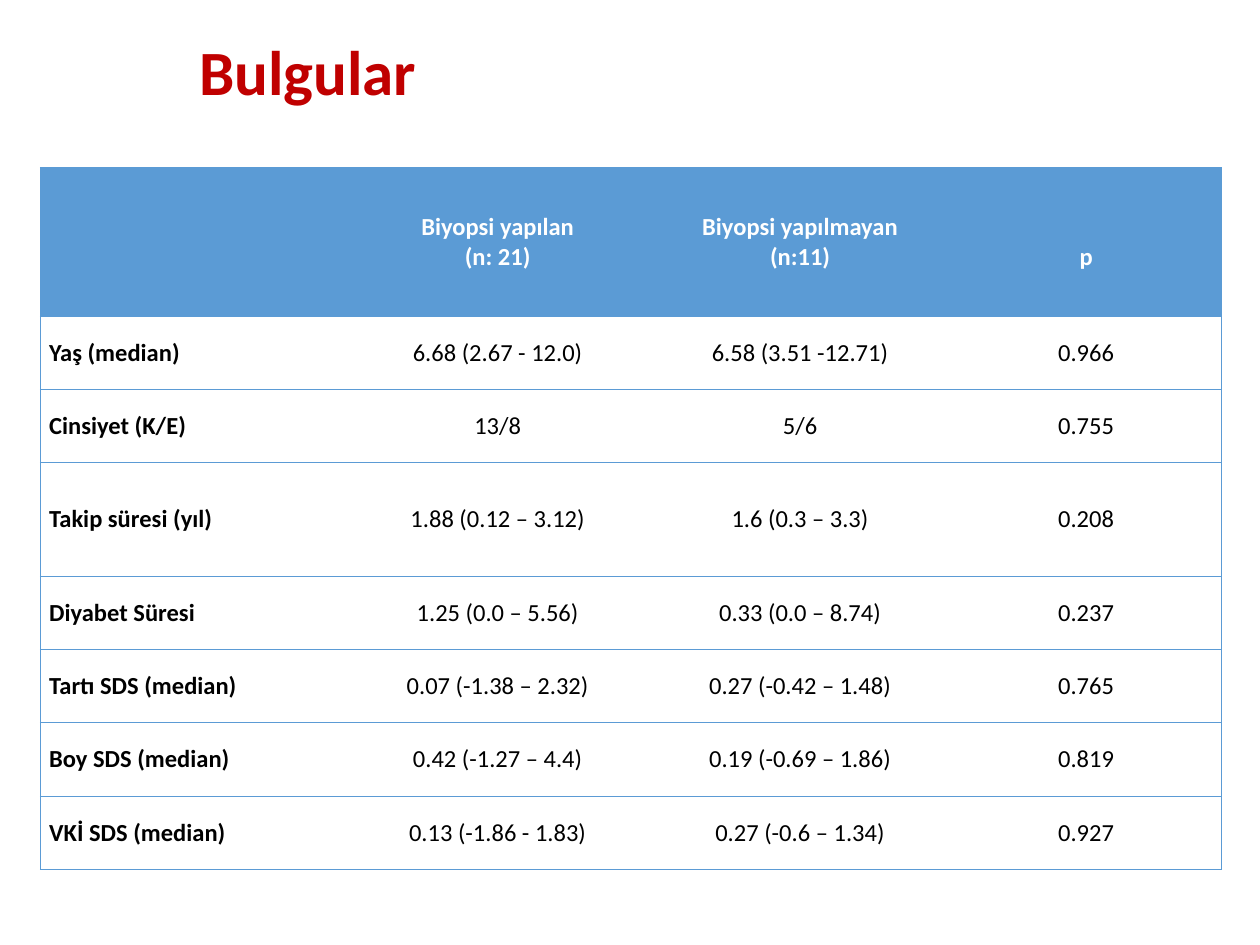
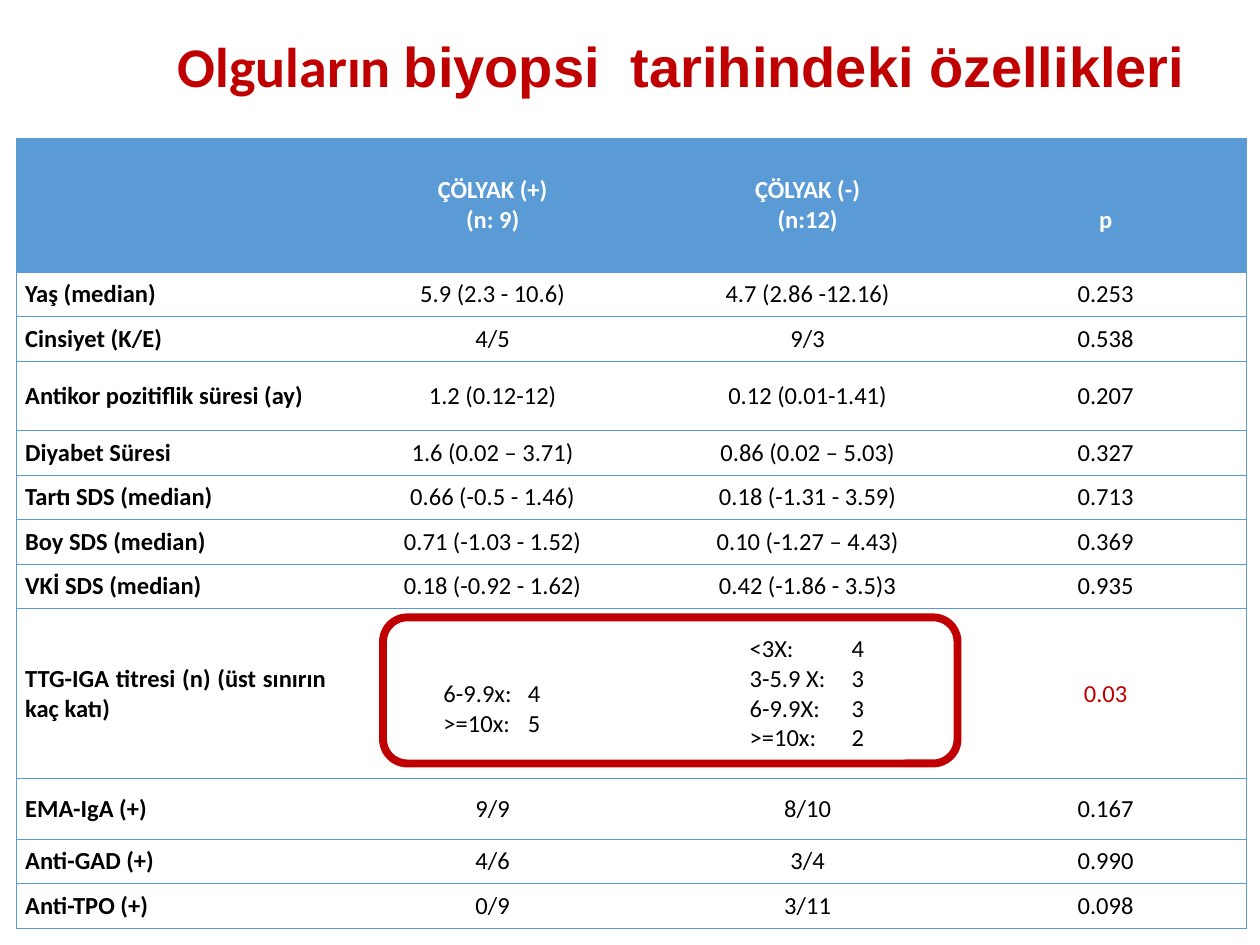
from lxml.etree import SubElement
from pptx import Presentation
from pptx.dml.color import RGBColor
from pptx.enum.shapes import MSO_SHAPE
from pptx.enum.text import MSO_ANCHOR, PP_ALIGN
from pptx.oxml import parse_xml
from pptx.oxml.ns import nsdecls, qn
from pptx.util import Inches, Pt

RED = RGBColor(0xC0, 0x00, 0x00)
BLUE = RGBColor(0x5B, 0x9B, 0xD5)
WHITE = RGBColor(0xFF, 0xFF, 0xFF)
BLACK = RGBColor(0x00, 0x00, 0x00)
FONT = "Calibri"
LINE_HEIGHT = 0.24

SLIDES = [
    {
        "title": [("Bulgular", FONT)],
        "title_at": (1.48, 0.26),
        "title_size": 36,
        "table_at": (0.32, 1.33),
        "height": 5.57,
        "cols": (2.43, 2.4, 2.4, 2.14),
        "special_rows": {0: 1.18, 3: 0.9},
        "rows": [
            ("", "Biyopsi yapılan\n(n: 21)", "Biyopsi yapılmayan\n(n:11)", "p"),
            ("Yaş (median)", "6.68 (2.67 - 12.0)", "6.58 (3.51 -12.71)", "0.966"),
            ("Cinsiyet (K/E)", "13/8", "5/6", "0.755"),
            ("Takip süresi (yıl)", "1.88 (0.12 – 3.12)", "1.6 (0.3 – 3.3)", "0.208"),
            ("Diyabet Süresi", "1.25 (0.0 – 5.56)", "0.33 (0.0 – 8.74)", "0.237"),
            ("Tartı SDS (median)", "0.07 (-1.38 – 2.32)", "0.27 (-0.42 – 1.48)", "0.765"),
            ("Boy SDS (median)", "0.42 (-1.27 – 4.4)", "0.19 (-0.69 – 1.86)", "0.819"),
            ("VKİ SDS (median)", "0.13 (-1.86 - 1.83)", "0.27 (-0.6 – 1.34)", "0.927"),
        ],
    },
    {
        "title": [("Olguların ", FONT), ("biyopsi  tarihindeki özellikleri", "Arial")],
        "title_at": (1.31, 0.21),
        "title_size": 32,
        "table_at": (0.13, 1.1),
        "height": 6.27,
        "cols": (2.53, 2.5, 2.5, 2.23),
        "special_rows": {0: 1.06, 3: 0.55, 8: 1.35, 9: 0.48},
        "rows": [
            ("", "ÇÖLYAK (+)\n(n: 9)", "ÇÖLYAK (-)\n(n:12)", "p"),
            ("Yaş (median)", "5.9 (2.3 - 10.6)", "4.7 (2.86 -12.16)", "0.253"),
            ("Cinsiyet (K/E)", "4/5", "9/3", "0.538"),
            ("Antikor pozitiflik süresi (ay)", "1.2 (0.12-12)", "0.12 (0.01-1.41)", "0.207"),
            ("Diyabet Süresi", "1.6 (0.02 – 3.71)", "0.86 (0.02 – 5.03)", "0.327"),
            ("Tartı SDS (median)", "0.66 (-0.5 - 1.46)", "0.18 (-1.31 - 3.59)", "0.713"),
            ("Boy SDS (median)", "0.71 (-1.03 - 1.52)", "0.10 (-1.27 – 4.43)", "0.369"),
            ("VKİ SDS (median)", "0.18 (-0.92 - 1.62)", "0.42 (-1.86 - 3.5)3", "0.935"),
            ("TTG-IGA titresi (n) (üst sınırın kaç katı)", "6-9.9x:\t4\n>=10x:\t5",
             "<3X:\t4\n3-5.9 X:\t3\n6-9.9X:\t3\n>=10x:\t2", "0.03"),
            ("EMA-IgA (+)", "9/9", "8/10", "0.167"),
            ("Anti-GAD (+)", "4/6", "3/4", "0.990"),
            ("Anti-TPO (+)", "0/9", "3/11", "0.098"),
        ],
        "lowered": {(0, 3), (8, 1)},
        "tabbed": {(8, 1): (0.86, 0.67), (8, 2): (0.79, 0.81)},
        "red_cell": (8, 3),
        "highlight": (3.04, 4.9, 4.56, 1.16),
    },
]
SLIDES[0]["lowered"] = {(0, 3)}


def add_title(s, data):
    """Place and format the slide title."""
    sp = s.shapes.title
    sp.left, sp.top = map(Inches, data["title_at"])
    sp.width, sp.height = Inches(8.52), Inches(0.68)
    tf = sp.text_frame
    tf.vertical_anchor = MSO_ANCHOR.MIDDLE
    p = tf.paragraphs[0]
    p.alignment, p.line_spacing = PP_ALIGN.LEFT, 0.9
    for text, font in data["title"]:
        add_run(p, text, data["title_size"], RED, True, font)


def add_run(p, text, size, color, bold, font=FONT):
    """Append one formatted run."""
    r = p.add_run()
    r.text = text
    r.font.name, r.font.size, r.font.bold = font, Pt(size), bold
    r.font.color.rgb = color


def set_borders(cell, first, last):
    """Rule the cell above and below, and at the outer sides of the table."""
    drawn = {"L": first, "R": last, "T": True, "B": True}
    for i, (side, visible) in enumerate(drawn.items()):
        fill = (f'<a:solidFill><a:srgbClr val="{BLUE}"/></a:solidFill>'
                if visible else "<a:noFill/>")
        ln = parse_xml(f'<a:ln{side} {nsdecls("a")} w="{Pt(0.5)}">{fill}</a:ln{side}>')
        cell._tc.get_or_add_tcPr().insert(i, ln)


def fill_cell(cell, text, place, data):
    """Write and format one table cell."""
    row, col = place
    header = row == 0
    cell.vertical_anchor = MSO_ANCHOR.MIDDLE
    cell.margin_left = cell.margin_right = Inches(0.07)
    cell.margin_top = Inches(LINE_HEIGHT if place in data["lowered"] else 0)
    cell.margin_bottom = 0
    set_borders(cell, col == 0, col == len(data["cols"]) - 1)
    if header:
        cell.fill.solid()
        cell.fill.fore_color.rgb = BLUE
    else:
        cell.fill.background()
    color = WHITE if header else RED if place == data.get("red_cell") else BLACK
    tabs = data.get("tabbed", {}).get(place)
    if tabs:
        cell.margin_left = Inches(tabs[0])
    tf = cell.text_frame
    for i, line in enumerate(text.split("\n") if text else []):
        p = tf.add_paragraph() if i else tf.paragraphs[0]
        p.alignment = PP_ALIGN.CENTER if col else PP_ALIGN.JUSTIFY
        if tabs:
            p.alignment = PP_ALIGN.LEFT
            stops = SubElement(p._p.get_or_add_pPr(), qn("a:tabLst"))
            SubElement(stops, qn("a:tab"), pos=str(Inches(tabs[1])), algn="l")
        add_run(p, line, 14, color, header or col == 0)


def add_results(s, data):
    """Add the results table, sharing spare height among the ordinary rows."""
    rows, cols, special = data["rows"], data["cols"], data["special_rows"]
    plain = (data["height"] - sum(special.values())) / (len(rows) - len(special))
    left, top = map(Inches, data["table_at"])
    table = s.shapes.add_table(len(rows), len(cols), left, top,
                               Inches(sum(cols)), Inches(data["height"])).table
    table.horz_banding = False
    for column, width in zip(table.columns, cols):
        column.width = Inches(width)
    for i, texts in enumerate(rows):
        table.rows[i].height = Inches(special.get(i, plain))
        for j, text in enumerate(texts):
            fill_cell(table.cell(i, j), text, (i, j), data)


def add_highlight(s, box):
    """Frame the cells that differ significantly."""
    sp = s.shapes.add_shape(MSO_SHAPE.ROUNDED_RECTANGLE, *map(Inches, box))
    sp.shadow.inherit = False
    sp.fill.background()
    sp.line.color.rgb, sp.line.width = RED, Pt(4.5)


def main():
    """Build the presentation."""
    prs = Presentation()
    prs.slide_width, prs.slide_height = Inches(10), Inches(7.5)
    for data in SLIDES:
        s = prs.slides.add_slide(prs.slide_layouts[5])
        add_title(s, data)
        add_results(s, data)
        if "highlight" in data:
            add_highlight(s, data["highlight"])
    prs.save("out.pptx")


if __name__ == "__main__":
    main()
